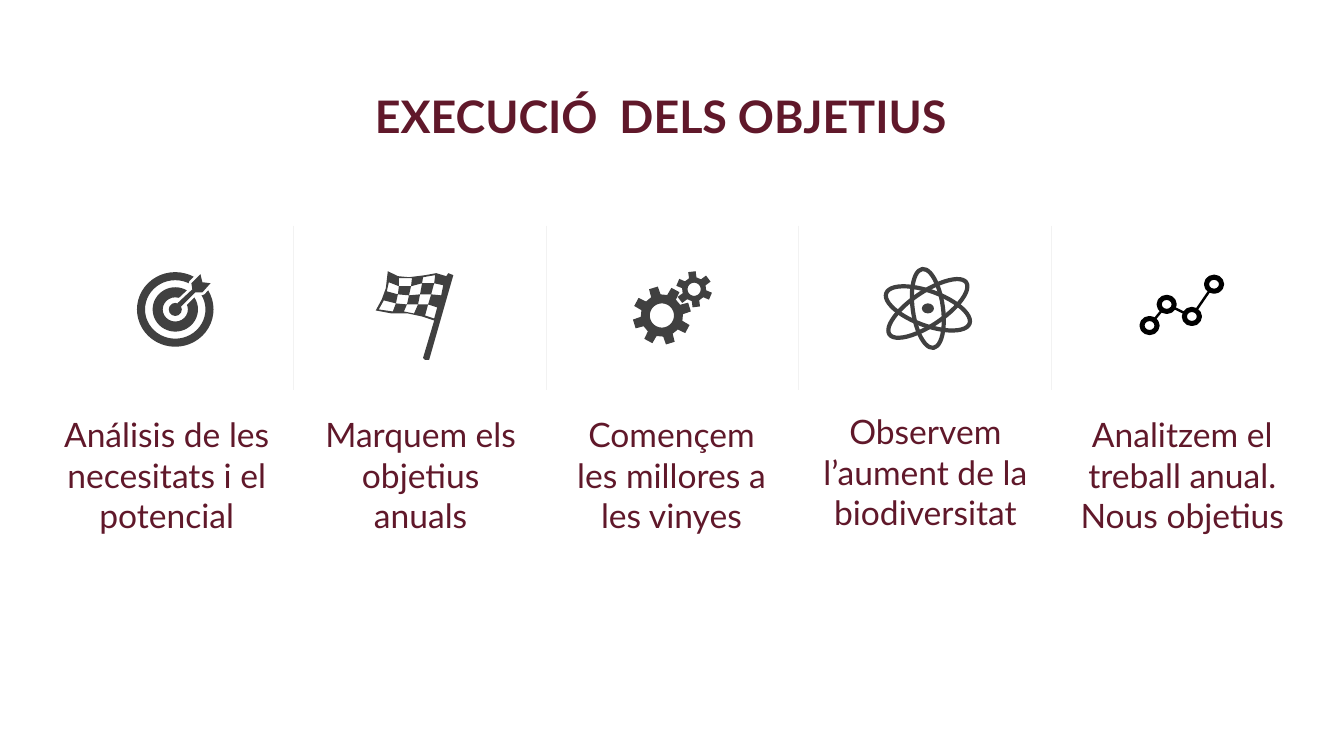
import math

from pptx import Presentation
from pptx import util as u
from pptx.dml.color import RGBColor
from pptx.enum import shapes, text
from pptx.oxml import ns
from lxml import etree

PX = 9144  # 100 px to the inch
WINE = RGBColor(0x60, 0x18, 0x2A)
GREY = RGBColor(0x40, 0x40, 0x40)
PALE = RGBColor(0xF2, 0xF2, 0xF2)
BLACK = RGBColor(0, 0, 0)
WHITE = RGBColor(255, 255, 255)
FONT = "Lato"


def px(length):
    return u.Emu(round(length * PX))


def paint(shape, fill=None, line=None, width=1):
    """Set fill and outline; None leaves that part out."""
    shape.shadow.inherit = False
    if fill is None:
        shape.fill.background()
    else:
        shape.fill.solid()
        shape.fill.fore_color.rgb = fill
    if line is None:
        shape.line.fill.background()
    else:
        shape.line.color.rgb = line
        shape.line.width = u.Pt(width)


def centred(slide, preset, cx, cy, width, height):
    return slide.shapes.add_shape(preset, px(cx - width / 2), px(cy - height / 2),
                                  px(width), px(height))


def outline(slide, contours, x, y):
    """Draw closed contours as one shape; inner contours are holes."""
    contours = [[(px(x + a), px(y + b)) for a, b in contour] for contour in contours]
    builder = slide.shapes.build_freeform(*contours[0][0], scale=1.0)
    for i, contour in enumerate(contours):
        if i:
            builder.move_to(*contour[0])
        builder.add_line_segments(contour[1:], close=True)
    return builder.convert_to_shape()


def straight(slide, x1, y1, x2, y2, colour, width):
    line = slide.shapes.add_connector(shapes.MSO_CONNECTOR.STRAIGHT,
                                      px(x1), px(y1), px(x2), px(y2))
    line.line.color.rgb = colour
    line.line.width = u.Pt(width)
    etree.SubElement(line._element.spPr, ns.qn("a:effectLst"))


def target(slide, x, y):
    cx, cy = x + 38, y + 37
    for width, height, ring in ((76, 74, 8), (45, 44, 10)):
        donut = centred(slide, shapes.MSO_SHAPE.DONUT, cx, cy, width, height)
        donut.adjustments[0] = ring / height
        paint(donut, GREY)
    arrow = [(40, 31), (55, 17), (54, 11), (63, 2), (65, 10),
             (73, 11), (65, 20), (58, 20), (44, 34)]
    paint(outline(slide, [arrow], x, y), WHITE, WHITE, 4)
    paint(outline(slide, [arrow], x, y), GREY)
    paint(centred(slide, shapes.MSO_SHAPE.OVAL, cx, cy, 13, 13), GREY)


def flag(slide, x, y):
    cloth_and_pole = [(12, 0), (22, 5), (33, 6), (49, 4), (60, 2), (70, 5), (72, 2),
                      (77, 4), (53, 88), (49, 88), (47, 86), (58, 49), (46, 45),
                      (32, 42), (16, 42), (0, 39), (6, 28), (10, 17)]
    nodes = [[(12, 3), (23, 7), (36, 7), (47, 6), (59, 4), (69, 6)],
             [(13, 11), (23, 15), (35, 15), (46, 12), (58, 12), (67, 14)],
             [(11, 20), (22, 23), (33, 24), (44, 23), (55, 23), (65, 24)],
             [(8, 29), (20, 32), (31, 33), (42, 33), (52, 33), (61, 36)],
             [(3, 38), (17, 40), (28, 40), (38, 42), (49, 44), (58, 47)]]
    white_checks = [[nodes[r][c], nodes[r][c + 1], nodes[r + 1][c + 1], nodes[r + 1][c]]
                    for r in range(4) for c in range(5) if (r + c) % 2]
    paint(outline(slide, [cloth_and_pole] + white_checks, x, y), GREY)


def polar(radius, degrees):
    angle = math.radians(degrees)
    return radius * math.cos(angle), radius * math.sin(angle)


def gear(slide, cx, cy, teeth, first, tip, root, hole):
    """Draw a gear whose first tooth points at the angle given."""
    pitch = 360 / teeth
    profile = ((root, -0.3), (tip, -0.2), (tip, 0.2), (root, 0.3))
    rim = [polar(radius, first + pitch * (i + share))
           for i in range(teeth) for radius, share in profile]
    bore = [polar(hole, 10 * i) for i in range(36)]
    paint(outline(slide, [rim, bore], cx, cy), GREY)


def gears(slide, x, y):
    gear(slide, x + 27, y + 44, 8, -107, 29, 21, 12)
    gear(slide, x + 59, y + 18, 6, -97, 18, 12, 6.5)


def atom(slide, x, y):
    cx, cy = x + 44, y + 42
    for width, height, turn in ((30, 79, -8), (88, 34, 20), (92, 33, -34)):
        orbit = centred(slide, shapes.MSO_SHAPE.OVAL, cx, cy, width, height)
        orbit.rotation = turn
        paint(orbit, line=GREY, width=3)
    paint(centred(slide, shapes.MSO_SHAPE.OVAL, cx, cy, 12, 10), GREY)


def trend(slide, x, y):
    points = [(10, 50), (27, 29), (52, 41), (74, 9)]
    points = [(x + a, y + b) for a, b in points]
    for start, end in zip(points, points[1:]):
        straight(slide, *start, *end, BLACK, 1.75)
    for cx, cy in points:
        paint(centred(slide, shapes.MSO_SHAPE.OVAL, cx, cy, 15, 14), WHITE, BLACK, 3.6)


def write(paragraph, words, size, bold=False):
    paragraph.text = words
    paragraph.alignment = text.PP_ALIGN.CENTER
    font = paragraph.font
    font.name, font.size, font.bold = FONT, u.Pt(size), bold
    font.color.rgb = WINE


def heading(slide, words, x, y, width, height):
    title = slide.shapes.title
    title.left, title.top, title.width, title.height = map(px, (x, y, width, height))
    title.fill.solid()
    title.fill.fore_color.rgb = WHITE
    frame = title.text_frame
    frame.margin_left = frame.margin_right = frame.margin_top = frame.margin_bottom = 0
    frame.vertical_anchor = text.MSO_ANCHOR.MIDDLE
    frame.auto_size = text.MSO_AUTO_SIZE.NONE
    write(frame.paragraphs[0], words, 32, bold=True)
    frame.paragraphs[0].line_spacing = 0.9


def step(slide, x, y, icon, icon_x, icon_y, label_y, lines):
    """Place an icon and its label; offsets count from the column's corner."""
    icon(slide, x + icon_x, y + icon_y)
    label = slide.shapes.add_textbox(px(x), px(y + label_y), px(227), px(170))
    frame = label.text_frame
    frame.word_wrap = True
    for i, words in enumerate(lines):
        paragraph = frame.add_paragraph() if i else frame.paragraphs[0]
        write(paragraph, words, 24)


STEPS = [
    (52, target, 84, 46, 182, ["Análisis de les necesitats i el potencial"]),
    (304, flag, 69, 45, 182, ["Marquem els objetius anuals"]),
    (553, gears, 77, 45, 182, ["Començem les millores a les vinyes"]),
    (805, atom, 72, 40, 179, ["Observem l’aument de la biodiversitat"]),
    (1060, trend, 71, 49, 182, ["Analitzem el treball anual.", "Nous objetius"]),
]


def main():
    prs = Presentation()
    prs.slide_width, prs.slide_height = px(1334), px(750)
    slide = prs.slides.add_slide(prs.slide_layouts[5])
    heading(slide, "EXECUCIÓ  DELS OBJETIUS", 170, 91, 972, 54)
    for i in range(len(STEPS) - 1):
        divider_x = 291 + 251 * i
        straight(slide, divider_x, 224, divider_x, 387, PALE, 0.75)
    for x, *parts in STEPS:
        step(slide, x, 224, *parts)
    prs.save("out.pptx")


if __name__ == "__main__":
    main()
